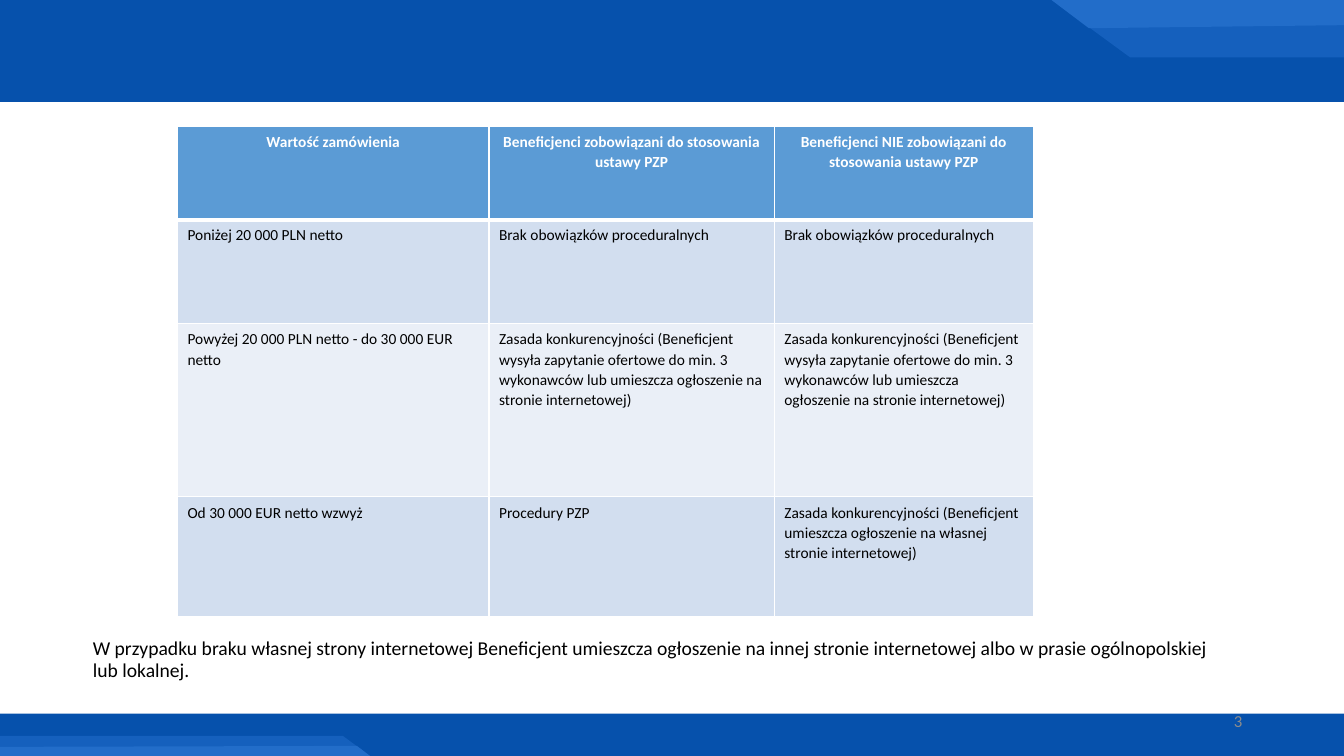
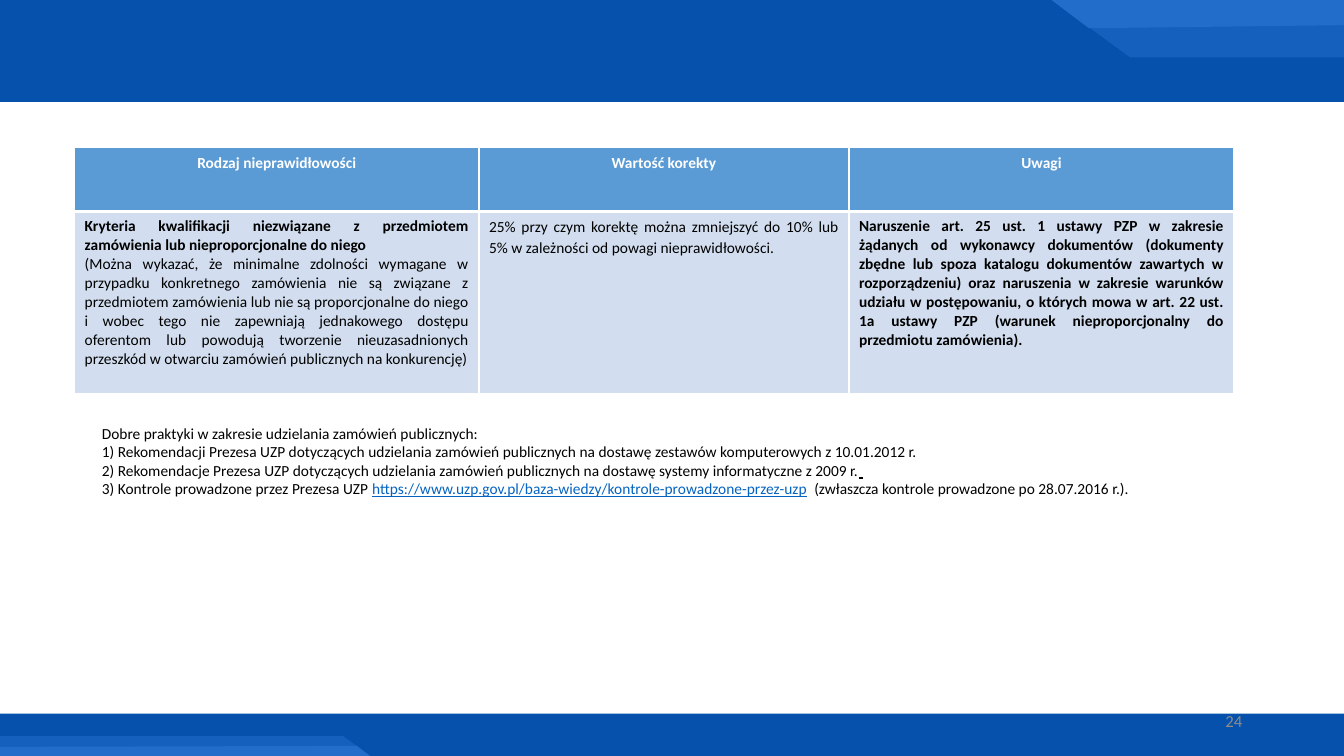
from lxml import etree
from pptx import Presentation
from pptx.dml.color import RGBColor
from pptx.enum import shapes, text
from pptx.oxml.ns import qn
from pptx.util import Inches, Pt

FONT = "Calibri"
BLACK = RGBColor(0x00, 0x00, 0x00)
WHITE = RGBColor(0xFF, 0xFF, 0xFF)
GREY = RGBColor(0x8C, 0x8C, 0x8C)
LINK = RGBColor(0x05, 0x63, 0xC1)
BAND = RGBColor(0x06, 0x51, 0xAC)
BAND_MID = RGBColor(0x15, 0x60, 0xBD)
BAND_LIGHT = RGBColor(0x22, 0x6D, 0xC9)
HEADER = RGBColor(0x5B, 0x9B, 0xD5)
STRIPES = [RGBColor(0xD2, 0xDE, 0xEF), RGBColor(0xEA, 0xEF, 0xF7)]
LEFT, CENTER, RIGHT, JUSTIFY = (text.PP_ALIGN.LEFT, text.PP_ALIGN.CENTER,
                                text.PP_ALIGN.RIGHT, text.PP_ALIGN.JUSTIFY)

# Shared bands: (top, height) and (colour, corner points)
BANDS = [(-0.03, 1.04), (7.08, 0.42)]
ACCENTS = [
    (BAND_MID, [(13.33, -0.03), (10.39, -0.03), (11.21, 0.57), (13.33, 0.57)]),
    (BAND_LIGHT, [(13.33, -0.03), (10.39, -0.03), (10.8, 0.28), (13.33, 0.25)]),
    (BAND_MID, [(0, 7.5), (3.67, 7.5), (3.4, 7.3), (0, 7.3)]),
    (BAND_LIGHT, [(0, 7.5), (3.67, 7.5), (3.54, 7.4), (0, 7.41)]),
]

# Content: a cell is a list of (text, bold, tight) paragraphs or a plain string
NONE_REQUIRED = "Brak obowiązków proceduralnych"
COMPETITION = ("Zasada konkurencyjności (Beneficjent wysyła zapytanie ofertowe do min. 3 "
               "wykonawców lub umieszcza ogłoszenie na stronie internetowej)")
SLIDES = [
    {
        "number": "3",
        "title_at": (0.82, 3.69), "title_size": 14, "title_spacing": 0.9,
        "title": [[("W przypadku braku własnej strony internetowej Beneficjent umieszcza "
                    "ogłoszenie na innej stronie internetowej albo w prasie "
                    "ogólnopolskiej lub lokalnej.", {})]],
        "table_at": (1.76, 1.25), "align": LEFT,
        "cols": [3.09, 2.83, 2.57], "rows": [0.93, 1.03, 1.72, 1.19],
        "cells": [
            ["Wartość zamówienia", "Beneficjenci zobowiązani do stosowania ustawy PZP",
             "Beneficjenci NIE zobowiązani do stosowania ustawy PZP"],
            ["Poniżej 20 000 PLN netto", NONE_REQUIRED, NONE_REQUIRED],
            ["Powyżej 20 000 PLN netto - do 30 000 EUR netto", COMPETITION, COMPETITION],
            ["Od 30 000 EUR netto wzwyż", "Procedury PZP",
             "Zasada konkurencyjności (Beneficjent umieszcza ogłoszenie na własnej "
             "stronie internetowej)"],
        ],
    },
    {
        "number": "24",
        "title_at": (0.91, 1.87), "title_size": 11, "title_spacing": 1.0,
        "title": [
            [("Dobre praktyki w zakresie udzielania zamówień publicznych:", {})],
            [("1) Rekomendacji Prezesa UZP dotyczących udzielania zamówień publicznych "
              "na dostawę zestawów komputerowych z 10.01.2012 r.", {})],
            [("2) Rekomendacje Prezesa UZP dotyczących udzielania zamówień publicznych "
              "na dostawę systemy informatyczne z 2009 r.", {}),
             (" ", {"bold": True, "underline": True})],
            [("3) Kontrole prowadzone przez Prezesa UZP ", {}),
             ("https://www.uzp.gov.pl/baza-wiedzy/kontrole-prowadzone-przez-uzp",
              {"underline": True, "color": LINK}),
             ("  (zwłaszcza kontrole prowadzone po 28.07.2016 r.).", {})],
        ],
        "table_at": (0.74, 1.46), "align": JUSTIFY,
        "cols": [4.01, 3.67, 3.82], "rows": [0.64, 1.81],
        "cells": [
            ["Rodzaj nieprawidłowości", "Wartość korekty", "Uwagi"],
            [[("Kryteria kwalifikacji niezwiązane z przedmiotem zamówienia lub "
               "nieproporcjonalne do niego", True, True),
              ("(Można wykazać, że minimalne zdolności wymagane w przypadku konkretnego "
               "zamówienia nie są związane z przedmiotem zamówienia lub nie są "
               "proporcjonalne do niego i wobec tego nie zapewniają jednakowego dostępu "
               "oferentom lub powodują tworzenie nieuzasadnionych przeszkód w otwarciu "
               "zamówień publicznych na konkurencję)", False, True)],
             "25% przy czym korektę można zmniejszyć do 10% lub 5% w zależności od "
             "powagi nieprawidłowości.",
             [("Naruszenie art. 25 ust. 1 ustawy PZP w zakresie żądanych od wykonawcy "
               "dokumentów (dokumenty zbędne lub spoza katalogu dokumentów zawartych w "
               "rozporządzeniu) oraz naruszenia w zakresie warunków udziału w "
               "postępowaniu, o których mowa w art. 22 ust. 1a ustawy PZP (warunek "
               "nieproporcjonalny do przedmiotu zamówienia).", True, True)]],
        ],
    },
]


def set_font(font, size, color, bold=False):
    font.name, font.size, font.bold = FONT, Pt(size), bold
    font.color.rgb = color


def add_bands(slide, layout):
    """Draw the bands and move them to the layout, behind its placeholders."""
    bands = []
    for top, height in BANDS:
        sp = slide.shapes.add_shape(shapes.MSO_SHAPE.RECTANGLE, 0, Inches(top),
                                    Inches(13.33), Inches(height))
        bands.append((sp, BAND))
    for color, points in ACCENTS:
        corners = [(Inches(x), Inches(y)) for x, y in points]
        builder = slide.shapes.build_freeform(*corners[0])
        builder.add_line_segments(corners[1:], close=True)
        bands.append((builder.convert_to_shape(), color))
    for i, (sp, color) in enumerate(bands):
        sp.shadow.inherit = False
        sp.fill.solid()
        sp.fill.fore_color.rgb = color
        sp.line.fill.background()
        layout.shapes.element.insert(2 + i, sp.element)


def add_title(slide, content):
    sp = slide.shapes.title
    sp.left, sp.top = (Inches(v) for v in content["title_at"])
    sp.width, sp.height = Inches(11.5), Inches(3.12)
    tf = sp.text_frame
    tf.word_wrap, tf.auto_size = True, text.MSO_AUTO_SIZE.NONE
    tf.vertical_anchor = text.MSO_ANCHOR.BOTTOM
    p = tf.paragraphs[0]
    p.alignment, p.line_spacing = LEFT, content["title_spacing"]
    for i, line in enumerate(content["title"]):
        if i:
            p.add_line_break()
        for words, style in line:
            r = p.add_run()
            r.text = words
            set_font(r.font, content["title_size"], style.get("color", BLACK),
                     style.get("bold", False))
            r.font.underline = style.get("underline", False)
    # Line breaks take the size of the text
    for br in p._p.findall(qn("a:br")):
        etree.SubElement(br, qn("a:rPr"), sz=str(content["title_size"] * 100))


def add_number(slide, number):
    sp = slide.shapes.add_textbox(Inches(9.42), Inches(6.95), Inches(3), Inches(0.4))
    tf = sp.text_frame
    tf.word_wrap, tf.vertical_anchor = True, text.MSO_ANCHOR.MIDDLE
    p = tf.paragraphs[0]
    p.text, p.alignment = number, RIGHT
    set_font(p.font, 12, GREY)


def set_borders(cell, top, bottom):
    tc_pr = cell._tc.get_or_add_tcPr()
    for side, width in (("L", 1), ("R", 1), ("T", top), ("B", bottom)):
        ln = etree.SubElement(tc_pr, qn("a:ln" + side), w=str(Pt(width)))
        fill = etree.SubElement(ln, qn("a:solidFill"))
        etree.SubElement(fill, qn("a:srgbClr"), val=str(WHITE))


def fill_cell(cell, value, row, align):
    header = row == 0
    set_borders(cell, 3 if row == 1 else 1, 3 if header else 1)
    cell.fill.solid()
    cell.fill.fore_color.rgb = HEADER if header else STRIPES[(row - 1) % 2]
    paragraphs = [(value, header, False)] if isinstance(value, str) else value
    tf = cell.text_frame
    for i, (words, bold, tight) in enumerate(paragraphs):
        p = tf.add_paragraph() if i else tf.paragraphs[0]
        p.text, p.alignment = words, CENTER if header else align
        if not tight:
            p.line_spacing, p.space_after = 1.07, Pt(6)
        set_font(p.font, 11, WHITE if header else BLACK, bold)


def add_grid(slide, content):
    cols, rows = content["cols"], content["rows"]
    x, y = content["table_at"]
    table = slide.shapes.add_table(len(rows), len(cols), Inches(x), Inches(y),
                                   Inches(sum(cols)), Inches(sum(rows))).table
    table.horz_banding = False
    for column, width in zip(table.columns, cols):
        column.width = Inches(width)
    for i, (height, values) in enumerate(zip(rows, content["cells"])):
        table.rows[i].height = Inches(height)
        for j, value in enumerate(values):
            fill_cell(table.cell(i, j), value, i, content["align"])


def main():
    prs = Presentation()
    prs.slide_width, prs.slide_height = Inches(13.33), Inches(7.5)
    layout = prs.slide_layouts[5]
    for i, content in enumerate(SLIDES):
        slide = prs.slides.add_slide(layout)
        if i == 0:
            add_bands(slide, layout)
        add_title(slide, content)
        add_number(slide, content["number"])
        add_grid(slide, content)
    prs.save("out.pptx")


if __name__ == "__main__":
    main()
